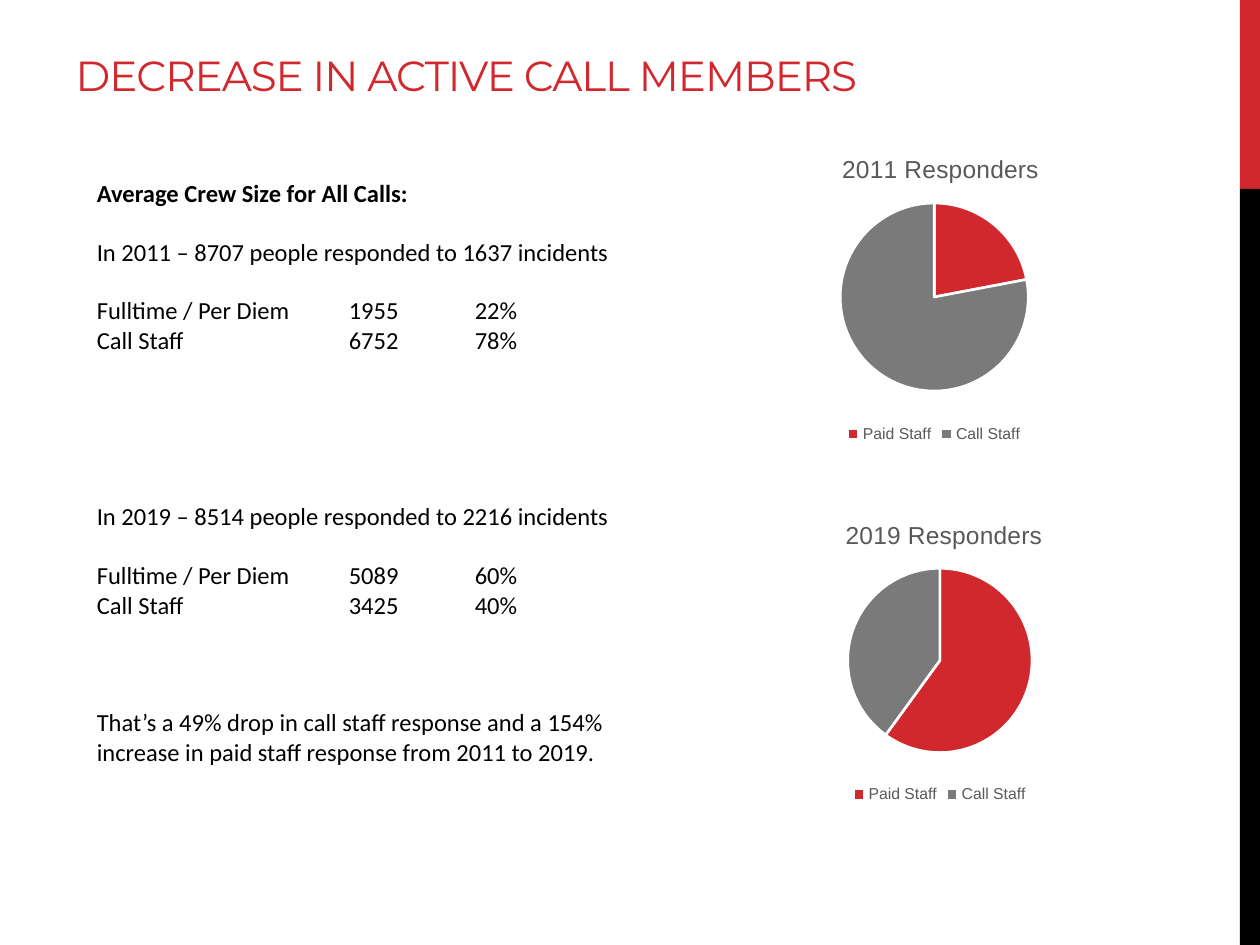
from dataclasses import dataclass

from lxml.etree import SubElement
from pptx import Presentation
from pptx.chart.data import CategoryChartData
from pptx.dml.color import RGBColor
from pptx.enum.chart import XL_CHART_TYPE as ChartType, XL_LEGEND_POSITION as LegendPosition
from pptx.enum.shapes import MSO_SHAPE as Shape
from pptx.enum.text import MSO_ANCHOR as Anchor, MSO_AUTO_SIZE as AutoSize, PP_ALIGN as Align
from pptx.oxml import parse_xml
from pptx.oxml.ns import nsdecls, qn
from pptx.util import Inches, Pt

WIDTH, HEIGHT = 10, 7.5
COLORS = {"red": "D1282E", "black": "000000", "gray": "7A7A7A", "label": "595959", "white": "FFFFFF"}
LINE_PITCH = 16.8
TITLE_WIDTH = 1.56


@dataclass(frozen=True)
class Box:
    x: float
    y: float
    w: float
    h: float

    def emu(self) -> tuple:
        return (Inches(self.x * WIDTH), Inches(self.y * HEIGHT),
                Inches(self.w * WIDTH), Inches(self.h * HEIGHT))


@dataclass(frozen=True)
class Band:
    color: str
    box: Box


@dataclass(frozen=True)
class Line:
    text: str
    gap_lines: int = 0
    bold: bool = False


@dataclass(frozen=True)
class Responders:
    year: int
    paid: int
    call: int
    box: Box


BANDS = [
    Band("red", Box(0.984, 0, 0.016, 0.2)),
    Band("black", Box(0.984, 0.2, 0.016, 0.8)),
]
CREW_LINES = [
    Line("Average Crew Size for All Calls:", bold=True),
    Line("In 2011 – 8707 people responded to 1637 incidents", 1),
    Line("Fulltime / Per Diem \t1955\t22%", 1),
    Line("Call Staff\t\t6752\t78%"),
    Line("In 2019 – 8514 people responded to 2216 incidents", 5),
    Line("Fulltime / Per Diem \t5089\t60%", 1),
    Line("Call Staff\t\t3425\t40%"),
    Line("That’s a 49% drop in call staff response and a 154% increase "
         "in paid staff response from 2011 to 2019.", 3),
]
PIES = [
    Responders(2011, 22, 78, Box(0.575, 1.03 / HEIGHT, 0.333, 2.53 / HEIGHT)),
    Responders(2019, 60, 40, Box(0.55, 3.94 / HEIGHT, 0.392, 2.48 / HEIGHT)),
]


def rgb(name: str) -> RGBColor:
    return RGBColor.from_string(COLORS[name])


def style_font(font, family: str, size: float, color: str, bold: bool = False) -> None:
    font.name, font.size, font.bold = family, Pt(size), bold
    font.color.rgb = rgb(color)


def draw_band(slide, band: Band) -> None:
    bar = slide.shapes.add_shape(Shape.RECTANGLE, *band.box.emu())
    bar.shadow.inherit = False
    bar.fill.solid()
    bar.fill.fore_color.rgb = rgb(band.color)
    bar.line.fill.background()


def draw_title(slide, text: str, box: Box) -> None:
    title = slide.shapes.title
    title.left, title.top, title.width, title.height = box.emu()
    frame = title.text_frame
    frame.text = text
    frame.auto_size, frame.vertical_anchor = AutoSize.NONE, Anchor.BOTTOM
    heading = frame.paragraphs[0]
    heading.alignment = Align.LEFT
    style_font(heading.runs[0].font, "Montserrat", 24, "red")
    heading.runs[0].font._element.set("spc", "-60")


def add_tab_stops(paragraph, inches: range) -> None:
    stops = SubElement(paragraph._p.get_or_add_pPr(), qn("a:tabLst"))
    for inch in inches:
        SubElement(stops, qn("a:tab"), pos=str(Inches(inch)), algn="l")


def draw_crew_text(slide, lines: list[Line], box: Box) -> None:
    frame = slide.shapes.add_textbox(*box.emu()).text_frame
    frame.word_wrap, frame.vertical_anchor = True, Anchor.MIDDLE
    for index, line in enumerate(lines):
        paragraph = frame.add_paragraph() if index else frame.paragraphs[0]
        paragraph.text = line.text
        paragraph.line_spacing = Pt(LINE_PITCH)
        paragraph.space_before = Pt(LINE_PITCH * line.gap_lines)
        add_tab_stops(paragraph, range(1, 4))
        for run in paragraph.runs:
            style_font(run.font, "Calibri", 14, "black", line.bold)


def manual_layout(**shares: float):
    inner = '<c:layoutTarget val="inner"/>' if "w" in shares else ""
    modes = "".join(f'<c:{key}Mode val="edge"/>' for key in shares if key in "xy")
    values = "".join(f'<c:{key} val="{share:.2f}"/>' for key, share in shares.items())
    return parse_xml(f'<c:layout {nsdecls("c")}><c:manualLayout>{inner}{modes}{values}'
                     '</c:manualLayout></c:layout>')


def place(parent, layout, after: str | None = None) -> None:
    for old in parent.findall(qn("c:layout")):
        parent.remove(old)
    if after:
        parent.find(qn(after)).addnext(layout)
    else:
        parent.insert(0, layout)


def draw_pie(slide, responders: Responders) -> None:
    data = CategoryChartData()
    data.categories = ["Paid Staff", "Call Staff"]
    data.add_series("Series 1", (responders.paid, responders.call))
    chart = slide.shapes.add_chart(ChartType.PIE, *responders.box.emu(), data).chart
    style_font(chart.font, "Arial", 10, "black")

    chart.has_title = True
    title = chart.chart_title
    title.text_frame.text = f"{responders.year} Responders"
    style_font(title.text_frame.paragraphs[0].runs[0].font, "Arial", 14, "label")
    title.include_in_layout = False
    title_x = (1 - TITLE_WIDTH / (responders.box.w * WIDTH)) / 2
    place(title._element, manual_layout(x=title_x, y=0.06), "c:tx")

    chart.has_legend = True
    chart.legend.position = LegendPosition.BOTTOM
    chart.legend.include_in_layout = False
    style_font(chart.legend.font, "Arial", 9, "label")

    plot = chart.plots[0]
    plot.vary_by_categories = True
    for index, color in enumerate(("red", "gray")):
        slice_format = plot.series[0].points[index].format
        slice_format.fill.solid()
        slice_format.fill.fore_color.rgb = rgb(color)
        slice_format.line.color.rgb = rgb("white")
        slice_format.line.width = Pt(1.5)
    plot_area = chart._chartSpace.chart.plotArea
    place(plot_area, manual_layout(x=0.1, y=0.23, w=0.8, h=0.59))


def main() -> None:
    deck = Presentation()
    deck.slide_width, deck.slide_height = Inches(WIDTH), Inches(HEIGHT)
    slide = deck.slides.add_slide(deck.slide_layouts[5])
    for band in BANDS:
        draw_band(slide, band)
    draw_title(slide, "DECREASE IN ACTIVE CALL MEMBERS", Box(0.05, 0.17 / HEIGHT, 0.767, 0.67 / HEIGHT))
    draw_crew_text(slide, CREW_LINES, Box(0.067, 1.34 / HEIGHT, 0.433, 4.81 / HEIGHT))
    for responders in PIES:
        draw_pie(slide, responders)
    deck.save("out.pptx")


if __name__ == "__main__":
    main()
